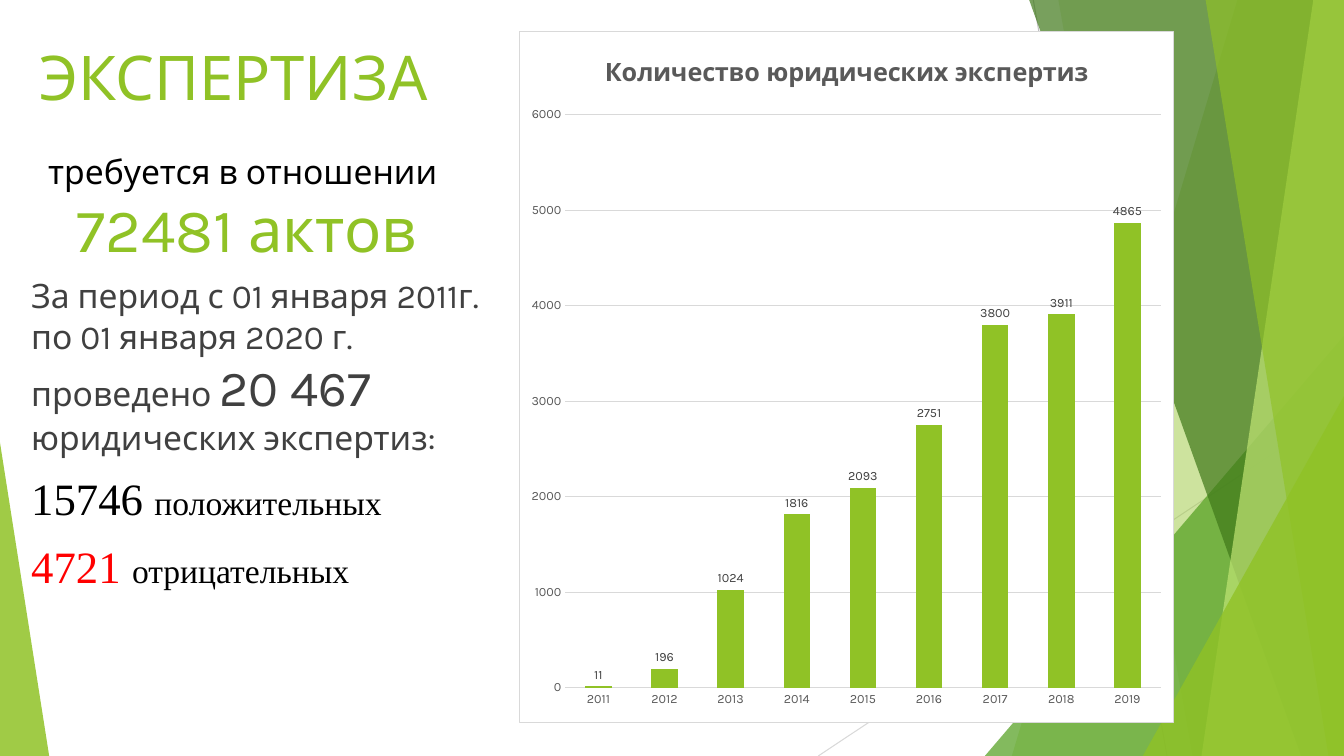
"""Build the slide on legal reviews with its column chart."""
from dataclasses import dataclass

from lxml import etree
from pptx import Presentation
from pptx.chart.chart import Chart
from pptx.chart.data import CategoryChartData
from pptx.dml.color import RGBColor
from pptx.enum.chart import XL_CHART_TYPE, XL_LABEL_POSITION, XL_TICK_MARK
from pptx.enum.shapes import MSO_CONNECTOR, MSO_SHAPE
from pptx.enum.text import MSO_ANCHOR, MSO_AUTO_SIZE, PP_ALIGN
from pptx.oxml import parse_xml
from pptx.oxml.ns import nsdecls, qn
from pptx.util import Cm, Pt

COLUMN = XL_CHART_TYPE.COLUMN_CLUSTERED
ABOVE = XL_LABEL_POSITION.OUTSIDE_END
NO_TICK = XL_TICK_MARK.NONE
STRAIGHT = MSO_CONNECTOR.STRAIGHT
CORNER = MSO_SHAPE.ISOSCELES_TRIANGLE
TOP, BOTTOM = MSO_ANCHOR.TOP, MSO_ANCHOR.BOTTOM
FIXED = MSO_AUTO_SIZE.NONE
LEFT, CENTER = PP_ALIGN.LEFT, PP_ALIGN.CENTER

WIDE, HIGH = 33.87, 19.05
SANS, SERIF = "Karla", "Times New Roman"
HUES = {
    "green": "90C226", "leaf": "54A021", "moss": "3F7819", "lime": "C0E474",
    "black": "000000", "red": "FF0000", "dark": "404040", "gray": "595959",
    "rule": "D9D9D9", "line": "BFBFBF", "white": "FFFFFF",
}
HEADING = "Количество юридических экспертиз"
COUNTS = {
    "2011": 11, "2012": 196, "2013": 1024, "2014": 1816, "2015": 2093,
    "2016": 2751, "2017": 3800, "2018": 3911, "2019": 4865,
}


@dataclass
class Wedge:
    """Shape from a slanted left side to the right slide edge."""
    top: float
    foot: float
    hue: str
    alpha: int


@dataclass
class Spike:
    """Right triangle that stands on the bottom slide edge."""
    left: float
    top: float
    width: float
    peak: float
    hue: str
    alpha: int


@dataclass
class Ray:
    """Thin straight line."""
    start: tuple[float, float]
    end: tuple[float, float]
    hue: str


@dataclass
class Piece:
    """Run of text."""
    text: str
    size: int
    hue: str
    font: str = SANS


RAYS = [
    Ray((26.04, 0), (29.41, HIGH), "line"),
    Ray((WIDE, 10.24), (20.62, HIGH), "rule"),
]
SHARDS = [
    Wedge(31.19, 25.5, "green", 30),
    Wedge(26.67, 30.05, "green", 20),
    Spike(24.82, 8.46, 9.05, 1, "leaf", 72),
    Wedge(25.93, 32.79, "moss", 70),
    Wedge(33.1, 30.28, "lime", 70),
    Wedge(30.38, 33.48, "green", 65),
    Spike(28.8, 9.98, 5.07, 1, "green", 80),
    Spike(0, 11.15, 1.24, 0, "green", 85),
]
TITLE = [[Piece("ЭКСПЕРТИЗА", 44, "green")]]
NEED = [
    [Piece("требуется в отношении ", 24, "black")],
    [Piece("72481 актов", 44, "green")],
]
BODY = [
    [
        Piece("За период с 01 января 2011г. по 01 января 2020 г. проведено ", 24, "dark"),
        Piece("20 467 ", 36, "dark"),
        Piece("юридических экспертиз:", 24, "dark"),
    ],
    [Piece("15746 ", 32, "black", SERIF), Piece("положительных", 24, "black", SERIF)],
    [Piece("4721 ", 32, "red", SERIF), Piece("отрицательных", 24, "black", SERIF)],
]


def tint(name: str) -> RGBColor:
    """Return the named colour."""
    return RGBColor.from_string(HUES[name])


def draw_ray(slide, ray: Ray) -> None:
    """Draw one thin line without shadow."""
    ends = [Cm(n) for n in ray.start + ray.end]
    line = slide.shapes.add_connector(STRAIGHT, *ends)
    line.line.color.rgb = tint(ray.hue)
    line.line.width = Pt(0.75)
    etree.SubElement(line.element.spPr, qn("a:effectLst"))


def draw_shard(slide, shard: Wedge | Spike) -> None:
    """Draw one see-through shape."""
    if isinstance(shard, Wedge):
        pen = slide.shapes.build_freeform(Cm(shard.top), Cm(-0.02), 1.0)
        points = [(WIDE, -0.02), (WIDE, HIGH), (shard.foot, HIGH)]
        pen.add_line_segments([(Cm(x), Cm(y)) for x, y in points])
        shape = pen.convert_to_shape()
    else:
        shape = slide.shapes.add_shape(
            CORNER, Cm(shard.left), Cm(shard.top), Cm(shard.width), Cm(HIGH - shard.top))
        shape.adjustments[0] = shard.peak
    shape.shadow.inherit = False
    shape.line.fill.background()
    shape.fill.solid()
    shape.fill.fore_color.rgb = tint(shard.hue)
    color = shape.element.spPr.find(qn("a:solidFill"))[0]
    etree.SubElement(color, qn("a:alpha"), val=str(shard.alpha * 1000))


def write(shape, rows: list[list[Piece]], anchor, align, gap: int = 0) -> None:
    """Fill a shape with text, run by run."""
    frame = shape.text_frame
    frame.word_wrap = True
    frame.auto_size = FIXED
    frame.vertical_anchor = anchor
    for i, row in enumerate(rows):
        para = frame.add_paragraph() if i else frame.paragraphs[0]
        para.alignment = align
        para.space_before = Pt(gap)
        props = para._p.get_or_add_pPr()
        props.set("marL", "0")
        props.set("indent", "0")
        etree.SubElement(props, qn("a:buNone"))
        for piece in row:
            run = para.add_run()
            run.text = piece.text
            run.font.size = Pt(piece.size)
            run.font.name = piece.font
            run.font.color.rgb = tint(piece.hue)


def place(shape, left: float, top: float, width: float, height: float) -> None:
    """Move a placeholder and bring it to the front."""
    shape.left, shape.top = Cm(left), Cm(top)
    shape.width, shape.height = Cm(width), Cm(height)
    shape.element.getparent().append(shape.element)


def style(font, size: int, hue: str) -> None:
    """Set the chart font."""
    font.name, font.size = SANS, Pt(size)
    font.color.rgb = tint(hue)


def frame_chart(chart: Chart) -> None:
    """Give the chart its back, border and plot place."""
    back = parse_xml(
        f'<c:spPr {nsdecls("c", "a")}>'
        f'<a:solidFill><a:srgbClr val="{HUES["white"]}"/></a:solidFill>'
        f'<a:ln w="9525"><a:solidFill><a:srgbClr val="{HUES["rule"]}"/></a:solidFill></a:ln>'
        '</c:spPr>')
    root = chart.element.find(qn("c:chart"))
    root.addnext(back)
    plot = root.find(qn("c:plotArea"))
    for old in plot.findall(qn("c:layout")):
        plot.remove(old)
    layout = etree.Element(qn("c:layout"))
    plot.insert(0, layout)
    manual = etree.SubElement(layout, qn("c:manualLayout"))
    parts = {"layoutTarget": "inner", "xMode": "edge", "yMode": "edge",
             "x": "0.07", "y": "0.12", "w": "0.91", "h": "0.83"}
    for key, val in parts.items():
        etree.SubElement(manual, qn(f"c:{key}"), val=val)


def draw_chart(slide) -> None:
    """Draw the column chart of counts by year."""
    data = CategoryChartData()
    data.categories = list(COUNTS)
    data.add_series(HEADING, list(COUNTS.values()))
    spot = [Cm(n) for n in (13.08, 0.79, 16.51, 17.42)]
    chart = slide.shapes.add_chart(COLUMN, *spot, data).chart
    style(chart.font, 10, "black")
    chart.has_legend = False
    chart.has_title = True
    run = chart.chart_title.text_frame.paragraphs[0].add_run()
    run.text = HEADING
    style(run.font, 18, "gray")
    run.font.bold = True
    for axis in (chart.category_axis, chart.value_axis):
        axis.major_tick_mark = axis.minor_tick_mark = NO_TICK
        axis.format.line.fill.background()
        style(axis.tick_labels.font, 9, "gray")
    scale = chart.value_axis
    scale.minimum_scale, scale.maximum_scale, scale.major_unit = 0, 6000, 1000
    grid = scale.major_gridlines.format.line
    grid.color.rgb, grid.width = tint("rule"), Pt(0.75)
    plot = chart.plots[0]
    plot.gap_width, plot.vary_by_categories = 150, False
    fill = plot.series[0].format.fill
    fill.solid()
    fill.fore_color.rgb = tint("green")
    plot.has_data_labels = True
    labels = plot.data_labels
    labels.show_value, labels.position = True, ABOVE
    style(labels.font, 9, "dark")
    frame_chart(chart)


def main() -> None:
    """Build and save the deck."""
    deck = Presentation()
    deck.slide_width, deck.slide_height = Cm(WIDE), Cm(HIGH)
    slide = deck.slides.add_slide(deck.slide_layouts[1])
    for ray in RAYS:
        draw_ray(slide, ray)
    for shard in SHARDS:
        draw_shard(slide, shard)
    title, body = slide.shapes.title, slide.placeholders[1]
    place(title, 0.53, 0.58, 10.72, 2.39)
    write(title, TITLE, BOTTOM, CENTER)
    place(body, 0.53, 6.81, 12.07, 11.56)
    write(body, BODY, TOP, LEFT, 10)
    need = slide.shapes.add_textbox(Cm(0.86), Cm(3.48), Cm(10.72), Cm(3.33))
    write(need, NEED, BOTTOM, CENTER)
    draw_chart(slide)
    deck.save("out.pptx")


if __name__ == "__main__":
    main()
